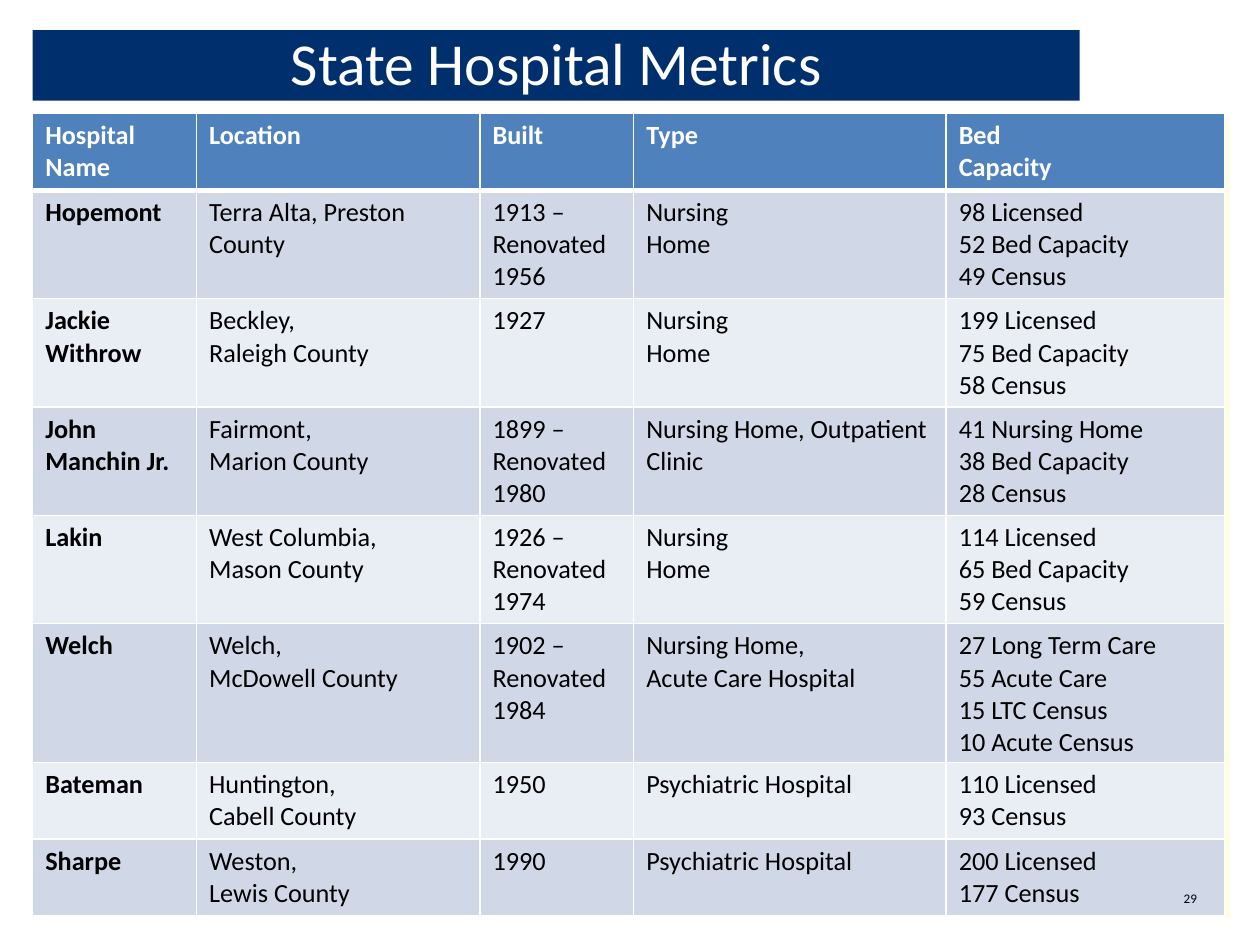
from lxml import etree
from pptx import Presentation
from pptx import util as u
from pptx.dml.color import RGBColor
from pptx.enum import shapes, text
from pptx.oxml import ns

COLORS = {
    "white": "FFFFFF",
    "black": "000000",
    "cream": "FFFDE2",
    "navy": "002F6D",
    "header": "4F81BD",
    "odd": "D0D8E8",
    "even": "E9EDF4",
}
COLUMN_WIDTHS = [1.3, 2.25, 1.22, 2.48, 2.21]
ROW_HEIGHTS = [0.61, 0.86, 0.86, 0.86, 0.86, 1.08, 0.61, 0.61]
HOSPITALS = [
    ["Hospital\nName", "Location", "Built", "Type", "Bed\nCapacity"],
    ["Hopemont", "Terra Alta, Preston County", "1913 – Renovated 1956",
     "Nursing\nHome", "98 Licensed\n52 Bed Capacity\n49 Census"],
    ["Jackie\nWithrow", "Beckley,\nRaleigh County", "1927",
     "Nursing\nHome", "199 Licensed\n75 Bed Capacity\n58 Census"],
    ["John\nManchin Jr.", "Fairmont,\nMarion County", "1899 – Renovated 1980",
     "Nursing Home, Outpatient Clinic", "41 Nursing Home\n38 Bed Capacity\n28 Census"],
    ["Lakin", "West Columbia,\nMason County", "1926 – Renovated 1974",
     "Nursing\nHome", "114 Licensed\n65 Bed Capacity\n59 Census"],
    ["Welch", "Welch,\nMcDowell County", "1902 – Renovated 1984",
     "Nursing Home,\nAcute Care Hospital",
     "27 Long Term Care\n55 Acute Care\n15 LTC Census\n10 Acute Census"],
    ["Bateman", "Huntington,\nCabell County", "1950",
     "Psychiatric Hospital", "110 Licensed\n93 Census"],
    ["Sharpe", "Weston,\nLewis County", "1990",
     "Psychiatric Hospital", "200 Licensed\n177 Census"],
]


class SlideBuilder:
    font_name = "Calibri"

    def __init__(self, slide):
        self.slide = slide

    def color(self, name):
        return RGBColor.from_string(COLORS[name])

    def style(self, frame, size, color, bold=False, align=None):
        for paragraph in frame.paragraphs:
            paragraph.alignment = align
            font = paragraph.font
            font.name = self.font_name
            font.size = u.Pt(size)
            font.bold = bold
            font.color.rgb = self.color(color)

    def rectangle(self, left, top, width, height, fill):
        shape = self.slide.shapes.add_shape(
            shapes.MSO_SHAPE.RECTANGLE,
            u.Inches(left), u.Inches(top), u.Inches(width), u.Inches(height))
        shape.shadow.inherit = False
        shape.fill.solid()
        shape.fill.fore_color.rgb = self.color(fill)
        shape.line.fill.background()

    def label(self, left, top, width, height, content, size, color, align,
              anchor=text.MSO_ANCHOR.TOP):
        box = self.slide.shapes.add_textbox(
            u.Inches(left), u.Inches(top), u.Inches(width), u.Inches(height))
        frame = box.text_frame
        frame.word_wrap = True
        frame.margin_left = frame.margin_right = 0
        frame.margin_top = frame.margin_bottom = 0
        frame.vertical_anchor = anchor
        frame.text = content
        self.style(frame, size, color, align=align)

    def border(self, cell, side, points):
        properties = cell._tc.get_or_add_tcPr()
        line = etree.SubElement(properties, ns.qn(f"a:ln{side}"), w=str(u.Pt(points)))
        fill = etree.SubElement(line, ns.qn("a:solidFill"))
        etree.SubElement(fill, ns.qn("a:srgbClr"), val=COLORS["white"])

    def table(self, left, top, widths, heights, rows):
        table = self.slide.shapes.add_table(
            len(rows), len(widths), u.Inches(left), u.Inches(top),
            u.Inches(sum(widths)), u.Inches(sum(heights))).table
        for column, width in zip(table.columns, widths):
            column.width = u.Inches(width)
        for row_index, (row, height) in enumerate(zip(rows, heights)):
            table.rows[row_index].height = u.Inches(height)
            is_header = row_index == 0
            fill = "header" if is_header else ("even", "odd")[row_index % 2]
            for column_index, content in enumerate(row):
                cell = table.cell(row_index, column_index)
                cell.text = content
                self.style(cell.text_frame, 15, "white" if is_header else "black",
                           bold=is_header or column_index == 0)
                self.border(cell, "L", 1)
                self.border(cell, "R", 1)
                self.border(cell, "T", 3 if row_index == 1 else 1)
                self.border(cell, "B", 3 if is_header else 1)
                cell.fill.solid()
                cell.fill.fore_color.rgb = self.color(fill)


def main():
    presentation = Presentation()
    presentation.slide_width = u.Inches(10)
    presentation.slide_height = u.Inches(7.5)
    builder = SlideBuilder(presentation.slides.add_slide(presentation.slide_layouts[6]))
    builder.rectangle(0.26, 0.93, 9.5, 6.35, "cream")
    builder.rectangle(0.26, 0.24, 8.31, 0.56, "navy")
    builder.label(0.26, 0.2, 8.31, 0.58, "State Hospital Metrics", 34, "white",
                  text.PP_ALIGN.CENTER, text.MSO_ANCHOR.MIDDLE)
    builder.table(0.26, 0.9, COLUMN_WIDTHS, ROW_HEIGHTS, HOSPITALS)
    builder.label(9.12, 7.07, 0.38, 0.19, "29", 7.5, "black", text.PP_ALIGN.RIGHT)
    presentation.save("out.pptx")


if __name__ == "__main__":
    main()
